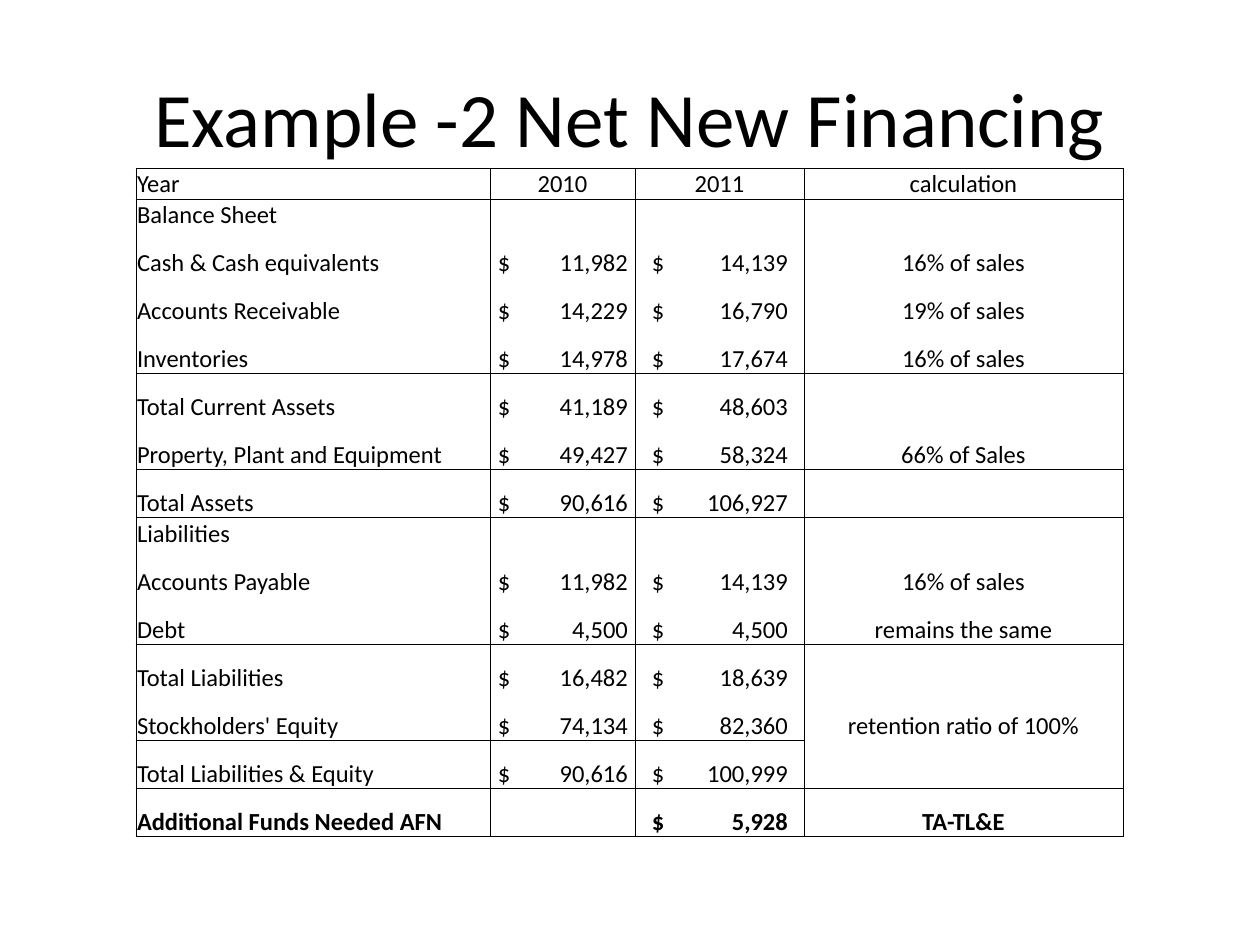
from lxml.etree import SubElement as Sub
from pptx import Presentation
from pptx.dml.color import RGBColor as Rgb
from pptx.enum.text import MSO_ANCHOR as Anchor, PP_ALIGN as Align
from pptx.oxml.ns import qn
from pptx.util import Pt

PX = 914400 / 126
INK = {"text": "000000", "line": "000000"}
FONT = "Calibri"

WIDTHS = [354, 145, 169, 319]
TALL, LOW = 48, 31
LOW_ROWS = {0, 1, 8}
RULED = {0, 4, 6, 7, 10, 12, 13, 14}  # rows with a line below
OPEN = {(12, 3)}  # cells left open to the row below
MONEY = {1: (8, 130), 2: (17, 136)}  # column: left inset, right tab

ROWS = [
    ("Year", "2010", "2011", "calculation"),
    ("Balance Sheet", "", "", ""),
    ("Cash & Cash equivalents", "11,982", "14,139", "16% of sales"),
    ("Accounts Receivable", "14,229", "16,790", "19% of sales"),
    ("Inventories", "14,978", "17,674", "16% of sales"),
    ("Total Current Assets", "41,189", "48,603", ""),
    ("Property, Plant and Equipment", "49,427", "58,324", "66% of Sales"),
    ("Total Assets", "90,616", "106,927", ""),
    ("Liabilities", "", "", ""),
    ("Accounts Payable", "11,982", "14,139", "16% of sales"),
    ("Debt", "4,500", "4,500", "remains the same"),
    ("Total Liabilities", "16,482", "18,639", ""),
    ("Stockholders' Equity", "74,134", "82,360", "retention ratio of 100%"),
    ("Total Liabilities & Equity", "90,616", "100,999", ""),
    ("Additional Funds Needed AFN", "", "5,928", "TA-TL&E"),
]


def px(n):
    return round(n * PX)


def style(para, size, bold=False):
    font = para.font
    font.name, font.size, font.bold = FONT, Pt(size), bold
    font.color.rgb = Rgb.from_string(INK["text"])


def border(cell, sides):
    props = cell._tc.get_or_add_tcPr()
    for side in "LRTB":
        line = Sub(props, qn(f"a:ln{side}"), w=str(Pt(0.5)))
        if side in sides:
            fill = Sub(line, qn("a:solidFill"))
            Sub(fill, qn("a:srgbClr"), val=INK["line"])
        else:
            Sub(line, qn("a:noFill"))


def add_tab(para, pos):
    props = para._p.get_or_add_pPr()
    tabs = props.makeelement(qn("a:tabLst"), {})
    Sub(tabs, qn("a:tab"), pos=str(px(pos)), algn="r")
    props.insert(0, tabs)


def ruled(row, col):
    return row in RULED and (row, col) not in OPEN


def fill_cell(cell, row, col, text):
    # Borders go before the fill in the cell properties
    above = row == 0 or ruled(row - 1, col)
    border(cell, "LR" + "T" * above + "B" * ruled(row, col))
    cell.fill.background()
    cell.vertical_anchor = Anchor.BOTTOM
    cell.margin_left = cell.margin_right = cell.margin_top = px(1)
    cell.margin_bottom = 0

    para = cell.text_frame.paragraphs[0]
    style(para, 14, row == len(ROWS) - 1)
    if row and text and col in MONEY:
        inset, stop = MONEY[col]
        cell.margin_left = px(inset)
        add_tab(para, stop)
        text = f"$\t{text}"
    else:
        para.alignment = Align.CENTER if col else Align.LEFT
    if text:
        para.add_run().text = text
    else:
        # Keeps empty cells from stretching the low rows
        Sub(para._p, qn("a:endParaRPr"), sz="1400")


def add_title(slide, x, y, w, h):
    title = slide.shapes.title
    title.left, title.top, title.width, title.height = map(px, (x, y, w, h))
    frame = title.text_frame
    frame.text = "Example -2 Net New Financing"
    frame.vertical_anchor = Anchor.MIDDLE
    frame.paragraphs[0].alignment = Align.CENTER
    style(frame.paragraphs[0], 44)


def add_sheet(slide, x, y):
    highs = [LOW if i in LOW_ROWS else TALL for i in range(len(ROWS))]
    box = map(px, (x, y, sum(WIDTHS), sum(highs)))
    table = slide.shapes.add_table(len(ROWS), len(WIDTHS), *box).table
    table.first_row = table.horz_banding = False
    for col, wide in zip(table.columns, WIDTHS):
        col.width = px(wide)
    for i, (high, texts) in enumerate(zip(highs, ROWS)):
        table.rows[i].height = px(high)
        for j, text in enumerate(texts):
            fill_cell(table.cell(i, j), i, j, text)


def main():
    deck = Presentation()
    deck.slide_width, deck.slide_height = px(1260), px(945)
    slide = deck.slides.add_slide(deck.slide_layouts[5])
    add_title(slide, 63, 38, 1134, 158)
    add_sheet(slide, 136, 168)
    deck.save("out.pptx")


if __name__ == "__main__":
    main()
